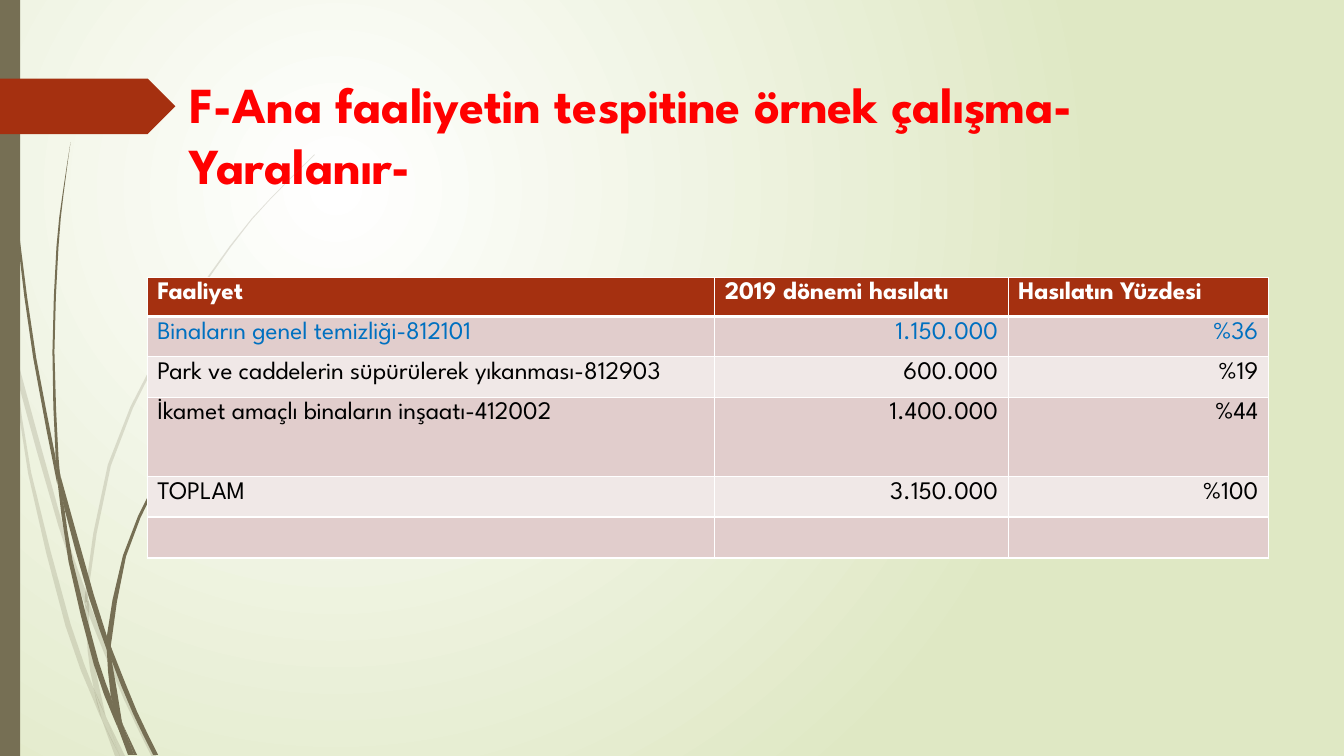
from lxml.etree import SubElement
from pptx import Presentation
from pptx.dml.color import RGBColor
from pptx.enum.lang import MSO_LANGUAGE_ID
from pptx.enum.shapes import MSO_SHAPE
from pptx.enum.text import MSO_ANCHOR, PP_ALIGN
from pptx.oxml.ns import qn
from pptx.util import Inches, Pt

COLORS = {
    "white": "FFFFFF", "meadow": "DFE8C4", "olive": "766F54",
    "rust": "A53010", "red": "FF0000", "blue": "0070C0",
    "black": "000000", "rose": "E1CDCC", "blush": "F0E8E7",
}
FONT = "League Spartan"

# Each blade of grass is a left edge and a right edge, both from tip to root.
PALE = [
    ([(0, 2.99), (.1, 3.44), (.11, 3.5)], [(0, 2.82), (.09, 3.22), (.11, 3.5)]),
    ([(.14, 3.45), (.17, 3.76), (.58, 5.22), (.84, 5.99)],
     [(.14, 3.45), (.62, 5.2), (.85, 5.86), (.84, 5.99)]),
    ([(.88, 5.96), (.88, 6.1), (1.23, 6.94), (1.5, 7.5)],
     [(.88, 5.96), (.92, 6.07), (1.27, 6.92), (1.55, 7.5)]),
    ([(1.05, 7.11), (1.19, 7.5)], [(1.05, 7.11), (1.24, 7.5)]),
    ([(.11, 3.5), (.28, 4.7), (.65, 6.21), (.92, 6.93), (1.01, 7.14)],
     [(.11, 3.5), (.17, 3.76), (.31, 4.69), (.7, 6.19), (.93, 6.83), (1.01, 7.14)]),
    ([(.84, 5.99), (.87, 6.46), (.93, 6.83), (1.05, 7.11)],
     [(.84, 5.99), (.88, 6.08), (.91, 6.46), (1.05, 7.11)]),
    ([(3.12, 1.53), (2.68, 1.97), (2.28, 2.44), (1.58, 3.48), (1.07, 4.61),
      (.85, 5.84), (.88, 5.96)],
     [(3.12, 1.54), (2.68, 1.98), (2.29, 2.45), (1.6, 3.49), (1.1, 4.62),
      (.88, 5.84), (.88, 5.96)]),
    ([(1.01, 7.14), (1.14, 7.5)], [(1.01, 7.14), (1.19, 7.5)]),
    ([(.85, 5.86), (.84, 5.99), (.88, 6.08)], [(.85, 5.86), (.88, 5.96), (.88, 6.1)]),
    ([(.93, 6.83), (1.01, 7.14), (1.19, 7.5)],
     [(.93, 6.83), (1.05, 7.11), (1.19, 7.5)]),
]
DARK = [
    ([(.03, 0), (.07, 1.1), (.17, 2.33), (.33, 3.55), (.57, 4.81)],
     [(.04, 0), (.08, 1.09), (.19, 2.32), (.36, 3.55), (.55, 4.53), (.57, 4.81)]),
    ([(.6, 4.72), (.64, 5.05), (.88, 5.92), (1.06, 6.45)],
     [(.6, 4.72), (.93, 5.9), (1.06, 6.31), (1.06, 6.45)]),
    ([(1.1, 6.41), (1.11, 6.56), (1.32, 7.08), (1.52, 7.49)],
     [(1.1, 6.41), (1.13, 6.49), (1.36, 7.06), (1.57, 7.49)]),
    ([(.57, 4.77), (.68, 5.57), (.93, 6.59), (1.11, 7.08), (1.17, 7.22)],
     [(.57, 4.77), (.64, 5.05), (.72, 5.56), (.98, 6.57), (1.1, 6.91), (1.17, 7.22)]),
    ([(.7, 1.41), (.62, 1.93), (.56, 2.45), (.52, 3.49), (.55, 4.49), (.6, 4.72)],
     [(.7, 1.41), (.63, 1.93), (.58, 2.45), (.54, 3.49), (.58, 4.53), (.6, 4.72)]),
    ([(1.22, 7.19), (1.33, 7.49)], [(1.22, 7.19), (1.36, 7.49)]),
    ([(.55, 4.49), (.57, 4.77), (.64, 5.05)], [(.55, 4.49), (.6, 4.72), (.64, 5.05)]),
    ([(2.6, 3.44), (2.31, 3.73), (2.04, 4.05), (1.56, 4.74), (1.22, 5.51),
      (1.06, 6.31), (1.1, 6.41)],
     [(2.61, 3.44), (2.31, 3.74), (2.05, 4.06), (1.58, 4.76), (1.25, 5.52),
      (1.11, 6.33), (1.1, 6.41)]),
    ([(1.17, 7.22), (1.27, 7.49)], [(1.17, 7.22), (1.31, 7.49)]),
    ([(1.06, 6.45), (1.1, 6.91), (1.22, 7.19)],
     [(1.06, 6.45), (1.11, 6.56), (1.21, 7.16)]),
    ([(1.06, 6.31), (1.06, 6.45), (1.11, 6.56)], [(1.06, 6.31), (1.1, 6.41), (1.11, 6.56)]),
    ([(1.1, 6.91), (1.17, 7.22), (1.3, 7.49)], [(1.1, 6.91), (1.22, 7.19), (1.33, 7.49)]),
]
ROWS = [
    ("Faaliyet", "2019 dönemi hasılatı", "Hasılatın Yüzdesi"),
    ("Binaların genel temizliği-812101", "1.150.000", "%36"),
    ("Park ve caddelerin süpürülerek yıkanması-812903", "600.000", "%19"),
    ("İkamet amaçlı binaların inşaatı-412002", "1.400.000", "%44"),
    ("TOPLAM", "3.150.000", "%100"),
    ("", "", ""),
]


def color(name):
    return RGBColor.from_string(COLORS[name])


def smooth(knots):
    """Add to the knots the midpoints of a Catmull-Rom curve."""
    ends = [knots[0], *knots, knots[-1]]
    curve = [knots[0]]
    for a, b, c, d in zip(ends, ends[1:], ends[2:], ends[3:]):
        mid = tuple((9 * (q + r) - p - s) / 16 for p, q, r, s in zip(a, b, c, d))
        curve += [mid, c]
    return curve


class Deck:
    def __init__(self):
        self.prs = Presentation()
        self.prs.slide_width = Inches(13.33)
        self.prs.slide_height = Inches(7.5)
        self.slide = self.prs.slides.add_slide(self.prs.slide_layouts[5])
        self.shapes = self.slide.shapes

    def glow(self, inner, outer):
        """Fill the background with a round gradient centred top left."""
        fill = self.slide.background.fill
        fill.gradient()
        for stop, name in zip(fill.gradient_stops, (inner, outer)):
            stop.color.rgb = color(name)
        grad = self.slide.background._cSld.find(".//" + qn("a:gradFill"))
        grad.remove(grad.find(qn("a:lin")))
        ring = SubElement(grad, qn("a:path"), {"path": "circle"})
        SubElement(ring, qn("a:fillToRect"), {
            "l": "50000", "t": "50000", "r": "100000", "b": "100000"})

    def paint(self, shape, name):
        shape.shadow.inherit = False
        shape.fill.solid()
        shape.fill.fore_color.rgb = color(name)
        shape.line.fill.background()

    def block(self, kind, box, name):
        self.paint(self.shapes.add_shape(kind, *map(Inches, box)), name)

    def blade(self, left, right, name, alpha=100):
        edge = [(Inches(x), Inches(y)) for x, y in smooth(left) + smooth(right)[::-1]]
        pen = self.shapes.build_freeform(*edge[0])
        pen.add_line_segments(edge[1:])
        shape = pen.convert_to_shape()
        self.paint(shape, name)
        tint = shape._element.spPr.find(qn("a:solidFill") + "/" + qn("a:srgbClr"))
        SubElement(tint, qn("a:alpha"), {"val": str(alpha * 1000)})

    def style(self, frame, size, name, bold, align=PP_ALIGN.LEFT):
        for para in frame.paragraphs:
            para.alignment = align
            para.font.size = Pt(size)
            for run in para.runs:
                font = run.font
                font.name, font.size, font.bold = FONT, Pt(size), bold
                font.language_id = MSO_LANGUAGE_ID.TURKISH
                font.color.rgb = color(name)

    def title(self, text, box):
        head = self.shapes.title
        head.left, head.top, head.width, head.height = map(Inches, box)
        frame = head.text_frame
        frame.text = text
        frame.word_wrap = True
        frame.vertical_anchor = MSO_ANCHOR.TOP
        self.style(frame, 36, "red", True)

    def border(self, cell, widths):
        props = cell._tc.get_or_add_tcPr()
        for spot, (side, width) in enumerate(widths.items()):
            line = props.makeelement(qn("a:ln" + side), {"w": str(Pt(width))})
            fill = SubElement(line, qn("a:solidFill"))
            SubElement(fill, qn("a:srgbClr"), {"val": COLORS["white"]})
            props.insert(spot, line)

    def table(self, rows, at, widths, heights):
        size = sum(widths), sum(heights)
        grid = self.shapes.add_table(
            len(rows), len(widths), *map(Inches, (*at, *size))).table
        for col, width in zip(grid.columns, widths):
            col.width = Inches(width)
        for r, (texts, height) in enumerate(zip(rows, heights)):
            grid.rows[r].height = Inches(height)
            back = "rust" if r == 0 else "rose" if r % 2 else "blush"
            ink = {0: "white", 1: "blue"}.get(r, "black")
            for c, text in enumerate(texts):
                cell = grid.cell(r, c)
                cell.text_frame.text = text
                align = PP_ALIGN.RIGHT if r and c else PP_ALIGN.LEFT
                self.style(cell.text_frame, 18, ink, r == 0, align)
                cell.fill.solid()
                cell.fill.fore_color.rgb = color(back)
                self.border(cell, {"L": 1, "R": 1, "T": 3 if r == 1 else 1,
                                   "B": 3 if r == 0 else 1})


def main():
    deck = Deck()
    deck.glow("white", "meadow")
    for left, right in PALE:
        deck.blade(left, right, "olive", 20)
    for left, right in DARK:
        deck.blade(left, right, "olive")
    deck.block(MSO_SHAPE.RECTANGLE, (0, 0, .2, 7.5), "olive")
    deck.block(MSO_SHAPE.PENTAGON, (0, .78, 1.74, .55), "rust")
    deck.title("F-Ana faaliyetin tespitine örnek çalışma-Yaralanır-",
               (1.78, .68, 10.8, 1.4))
    deck.table(ROWS, (1.46, 2.75), (5.63, 2.91, 2.58), (.39, .4, .4, .79, .4, .4))
    deck.prs.save("out.pptx")


if __name__ == "__main__":
    main()
